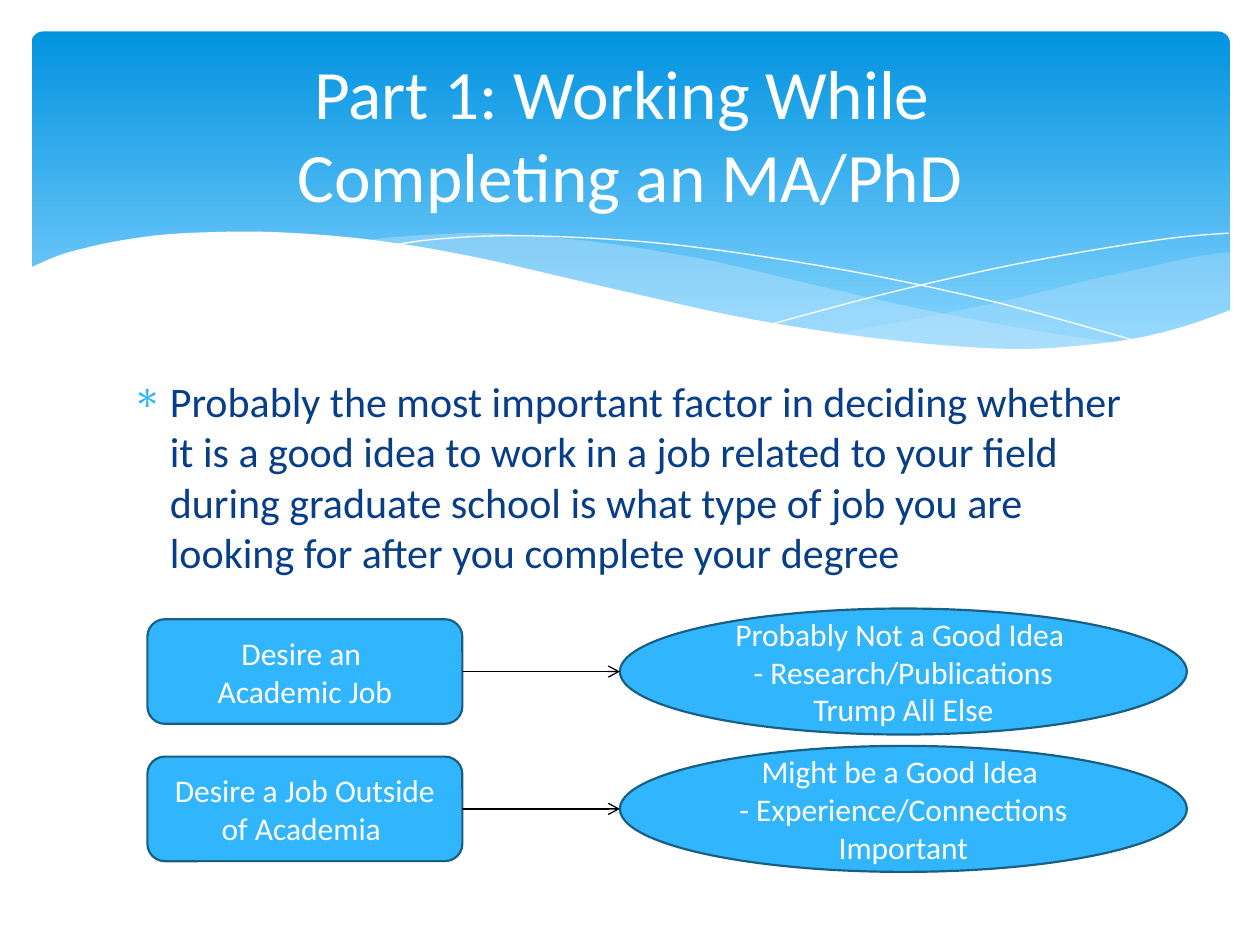
from dataclasses import dataclass
from typing import Any

from lxml.etree import SubElement
from pptx import Presentation
from pptx.dml.color import RGBColor
from pptx.enum.dml import MSO_LINE
from pptx.enum.shapes import MSO_CONNECTOR, MSO_SHAPE
from pptx.enum.text import MSO_ANCHOR, PP_ALIGN
from pptx.oxml.ns import qn
from pptx.util import Inches, Pt

COLORS = {
    "white": "FFFFFF",
    "black": "000000",
    "banner_top": "0293E0",
    "banner_bottom": "83D3FE",
    "wave": "C6E7FC",
    "accent": "31B6FD",
    "outline": "195F84",
    "body": "073E87",
}

RIGHT_WAVE_TOP = [(9.76, 2), (9.48, 2.04), (9.06, 2.13), (8.61, 2.23),
                  (8.05, 2.37), (7.53, 2.48), (7.06, 2.57), (6.61, 2.65)]
RIGHT_WAVE_BOTTOM = [(6.61, 2.65), (7.05, 2.71), (7.45, 2.75), (8.03, 2.78),
                     (8.54, 2.76), (8.97, 2.7), (9.35, 2.62), (9.76, 2.47)]
LEFT_WAVE_TOP = [(8.93, 2.73), (8.37, 2.65), (7.75, 2.54), (7.06, 2.4),
                 (6.29, 2.22), (5.69, 2.08), (5.14, 1.98), (4.65, 1.91),
                 (4.2, 1.87), (3.8, 1.85), (3.28, 1.87), (2.86, 1.91)]
LEFT_WAVE_BOTTOM = [(2.86, 1.91), (3.42, 1.99), (4.04, 2.11), (4.49, 2.22),
                    (5.3, 2.4), (6.01, 2.55), (6.65, 2.66), (7.22, 2.74),
                    (7.73, 2.77), (8.18, 2.78), (8.57, 2.77), (8.93, 2.73)]
FALLING_LINE = [(3.09, 1.95), (3.44, 1.9), (4.01, 1.87), (4.69, 1.89),
                (5.33, 1.94), (6.08, 2.04), (6.95, 2.19), (7.95, 2.41),
                (9.07, 2.72)]
RISING_LINE = [(6.13, 2.57), (6.95, 2.35), (7.76, 2.16), (8.36, 2.04),
               (8.95, 1.94), (9.38, 1.88), (9.75, 1.85)]
WHITE_EDGE = [(9.77, 2.46), (9.4, 2.59), (8.99, 2.69), (8.5, 2.75),
              (8.09, 2.77), (7.61, 2.75), (7.08, 2.7), (6.48, 2.62),
              (5.79, 2.5), (5.03, 2.33), (4.47, 2.2), (3.91, 2.07),
              (3.4, 1.97), (2.92, 1.9), (2.5, 1.86), (2.11, 1.84),
              (1.77, 1.84), (1.32, 1.86), (0.95, 1.91), (0.67, 1.97),
              (0.46, 2.03), (0.23, 2.13)]

ROWS = [
    (5.33, ["Desire an ", "Academic Job"],
     ["Probably Not a Good Idea ", "- Research/Publications Trump All Else"]),
    (6.42, ["Desire a Job Outside of Academia "],
     ["Might be a Good Idea ", "- Experience/Connections Important"]),
]


def rgb(name):
    return RGBColor.from_string(COLORS[name])


def apply_format(target, values):
    for name, value in values.items():
        setattr(target, name, value)


def smooth_curve(points, steps=4):
    padded = [points[0], *points, points[-1]]
    curve = [points[0]]
    for a, b, c, d in zip(padded, padded[1:], padded[2:], padded[3:]):
        for step in range(1, steps + 1):
            t = step / steps
            curve.append(tuple(
                (2 * q + (r - p) * t + (2 * p - 5 * q + 4 * r - s) * t ** 2
                 + (3 * q - p - 3 * r + s) * t ** 3) / 2
                for p, q, r, s in zip(a, b, c, d)))
    return curve


@dataclass
class SlideBuilder:
    slide: Any
    font: str = "Calibri"

    def banner(self, left, top, width, height):
        shape = self.slide.shapes.add_shape(
            MSO_SHAPE.ROUNDED_RECTANGLE,
            Inches(left), Inches(top), Inches(width), Inches(height))
        shape.adjustments[0] = 0.034
        shape.shadow.inherit = False
        shape.line.fill.background()
        shape.fill.gradient()
        shape.fill.gradient_angle = 270
        stops = [(0, "banner_top"), (0.9, "banner_bottom")]
        for stop, (position, color) in zip(shape.fill.gradient_stops, stops):
            stop.position = position
            stop.color.rgb = rgb(color)

    def freeform(self, points, closed):
        vertices = [(Inches(x), Inches(y)) for x, y in points]
        builder = self.slide.shapes.build_freeform(*vertices[0], scale=1.0)
        builder.add_line_segments(vertices[1:], close=closed)
        shape = builder.convert_to_shape()
        shape.shadow.inherit = False
        return shape

    def area(self, points, color, opacity=100):
        shape = self.freeform(points, True)
        shape.line.fill.background()
        shape.fill.solid()
        shape.fill.fore_color.rgb = rgb(color)
        if opacity < 100:
            element = shape._element.spPr.find(qn("a:solidFill")).find(qn("a:srgbClr"))
            SubElement(element, qn("a:alpha"), val=str(opacity * 1000))

    def curve(self, points):
        shape = self.freeform(smooth_curve(points), False)
        shape.fill.background()
        shape.line.color.rgb = rgb("white")
        shape.line.width = Pt(0)

    def set_text(self, shape, paragraphs, size, color, alignment, anchor):
        frame = shape.text_frame
        apply_format(frame, {"word_wrap": True, "vertical_anchor": anchor})
        for index, text in enumerate(paragraphs):
            paragraph = frame.paragraphs[0] if index == 0 else frame.add_paragraph()
            paragraph.text = text
            paragraph.alignment = alignment
            for run in paragraph.runs:
                apply_format(run.font, {"name": self.font, "size": Pt(size)})
                run.font.color.rgb = rgb(color)

    def text(self, left, top, width, height, text, size, color,
             alignment=PP_ALIGN.LEFT, anchor=MSO_ANCHOR.TOP):
        shape = self.slide.shapes.add_textbox(
            Inches(left), Inches(top), Inches(width), Inches(height))
        self.set_text(shape, [text], size, color, alignment, anchor)
        return shape

    def bullet(self, paragraph, indent):
        properties = paragraph._p.get_or_add_pPr()
        properties.set("marL", str(Inches(indent)))
        properties.set("indent", str(-Inches(indent)))
        color = SubElement(properties, qn("a:buClr"))
        SubElement(color, qn("a:srgbClr"), val=COLORS["accent"])
        SubElement(properties, qn("a:buFont"), typeface="Symbol")
        SubElement(properties, qn("a:buChar"), char="∗")

    def node(self, kind, left, middle, width, height, paragraphs):
        shape = self.slide.shapes.add_shape(
            kind, Inches(left), Inches(middle - height / 2),
            Inches(width), Inches(height))
        shape.shadow.inherit = False
        shape.fill.solid()
        shape.fill.fore_color.rgb = rgb("accent")
        shape.line.color.rgb = rgb("outline")
        shape.line.width = Pt(1.25)
        self.set_text(shape, paragraphs, 18, "white", PP_ALIGN.CENTER, MSO_ANCHOR.MIDDLE)
        return shape

    def arrow(self, source, target, target_site):
        middle = source.top + source.height // 2
        connector = self.slide.shapes.add_connector(
            MSO_CONNECTOR.STRAIGHT, source.left + source.width, middle,
            target.left, middle)
        connector.begin_connect(source, 3)
        connector.end_connect(target, target_site)
        apply_format(connector, {"end_x": target.left, "end_y": middle})
        apply_format(connector.line, {"width": Pt(0.75), "dash_style": MSO_LINE.SOLID})
        connector.line.color.rgb = rgb("black")
        properties = connector._element.spPr
        SubElement(properties.find(qn("a:ln")), qn("a:tailEnd"), type="arrow")
        SubElement(properties, qn("a:effectLst"))


def main():
    presentation = Presentation()
    apply_format(presentation, {"slide_width": Inches(10), "slide_height": Inches(7.5)})
    builder = SlideBuilder(presentation.slides.add_slide(presentation.slide_layouts[6]))

    builder.banner(0.25, 0.25, 9.51, 2.7)
    builder.area(smooth_curve(RIGHT_WAVE_TOP) + smooth_curve(RIGHT_WAVE_BOTTOM), "wave", 29)
    builder.area(smooth_curve(LEFT_WAVE_TOP) + smooth_curve(LEFT_WAVE_BOTTOM), "wave", 40)
    builder.curve(FALLING_LINE)
    builder.curve(RISING_LINE)
    builder.area(smooth_curve(WHITE_EDGE) + [(0.23, 3.29), (9.77, 3.29)], "white")

    body = builder.text(
        0.95, 2.93, 8.1, 4.16,
        "Probably the most important factor in deciding whether it is a good idea "
        "to work in a job related to your field during graduate school is what type "
        "of job you are looking for after you complete your degree", 24, "body")
    builder.bullet(body.text_frame.paragraphs[0], 0.3)
    builder.text(0.5, 0.37, 9, 1.37, "Part 1: Working While \vCompleting an MA/PhD",
                 39.6, "white", PP_ALIGN.CENTER, MSO_ANCHOR.MIDDLE)

    for middle, desire, advice in ROWS:
        box = builder.node(MSO_SHAPE.ROUNDED_RECTANGLE, 1.17, middle, 2.5, 0.83, desire)
        ellipse = builder.node(MSO_SHAPE.OVAL, 4.92, middle, 4.5, 1, advice)
        builder.arrow(box, ellipse, 2)

    presentation.save("out.pptx")


if __name__ == "__main__":
    main()
